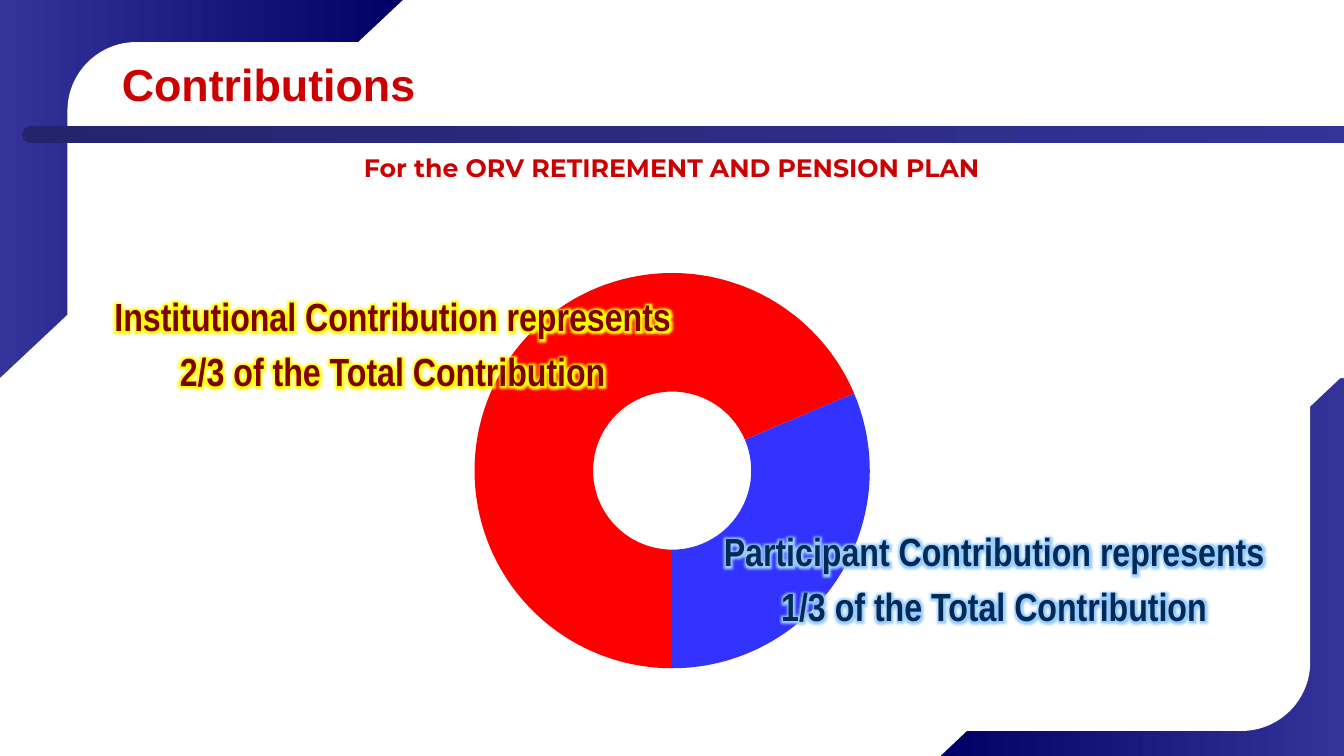
import pptx
import pptx.util
import pptx.dml.color
import pptx.enum.shapes
import pptx.enum.text
import pptx.oxml.ns
import lxml.etree

Cm = pptx.util.Cm
Pt = pptx.util.Pt
SHAPE = pptx.enum.shapes.MSO_SHAPE
ALIGN = pptx.enum.text.PP_ALIGN
ANCHOR = pptx.enum.text.MSO_ANCHOR
qn = pptx.oxml.ns.qn

COLORS = {
    "white": "FFFFFF", "navy": "000066", "indigo": "333399", "dusk": "24246D",
    "heading": "CC0000", "red": "FF0000", "blue": "3333FF",
    "maroon": "800000", "yellow": "FFFF00", "ink": "002A56", "sky": "99CCFF",
}

FRAME = [
    (SHAPE.RECTANGLE, (23.72, 9.53, 10.15, 9.52), ("navy", "indigo"), None, ()),
    (SHAPE.RIGHT_TRIANGLE, (23.7, 9.45, 10.16, 9.6), ("white",), "flipV", ()),
    (SHAPE.RECTANGLE, (0, 0, 10.16, 9.53), ("indigo", "navy"), None, ()),
    (SHAPE.RIGHT_TRIANGLE, (0, 0, 10.16, 9.53), ("white",), "flipH", ()),
    (SHAPE.RECTANGLE, (0, 9.53, 10.44, 9.52), ("white",), None, ()),
    (SHAPE.RECTANGLE, (23.42, 0, 10.45, 9.53), ("white",), None, ()),
    (SHAPE.ROUNDED_RECTANGLE, (1.7, 1.06, 31.32, 17.36), ("white",), None, (0.1,)),
    (SHAPE.ROUNDED_RECTANGLE, (0.56, 3.18, 34.44, 0.43), ("dusk", "indigo"), None, (0.5,)),
]

TITLE = "Contributions"
SUBTITLE = "For the ORV RETIREMENT AND PENSION PLAN"
RING_BOX = (11.96, 6.88, 9.96, 9.96)
RING_HOLE = 0.3
PARTS = [
    {"arc": (90, 337), "color": "red", "box": (1.6, 7.24, 16.59, 2.9),
     "text": "Institutional Contribution represents\n2/3 of the Total Contribution",
     "ink": "maroon", "glow": "yellow"},
    {"arc": (337, 90), "color": "blue", "box": (16.92, 13.16, 16.26, 2.9),
     "text": "Participant Contribution represents\n1/3 of the Total Contribution",
     "ink": "ink", "glow": "sky"},
]


def rgb(name):
    return pptx.dml.color.RGBColor.from_string(COLORS[name])


def add_shape(page, kind, box, colors, flip=None, adjustments=()):
    shape = page.shapes.add_shape(kind, *map(Cm, box))
    shape.shadow.inherit = False
    shape.line.fill.background()
    if len(colors) == 1:
        shape.fill.solid()
        shape.fill.fore_color.rgb = rgb(colors[0])
    else:
        shape.fill.gradient()
        shape.fill.gradient_angle = 0
        for stop, color, position in zip(shape.fill.gradient_stops, colors, (0, 1)):
            stop.color.rgb = rgb(color)
            stop.position = position
    if flip:
        shape._element.spPr.find(qn("a:xfrm")).set(flip, "1")
    for index, value in enumerate(adjustments):
        shape.adjustments[index] = value


def add_glow(span, color):
    effects = lxml.etree.Element(qn("a:effectLst"))
    glow = lxml.etree.SubElement(effects, qn("a:glow"), rad=str(Pt(10)))
    lxml.etree.SubElement(glow, qn("a:srgbClr"), val=COLORS[color])
    span._r.rPr.find(qn("a:solidFill")).addnext(effects)


def add_text(page, text, box, font, size, color, align=ALIGN.CENTER,
             anchor=ANCHOR.TOP, gap=0, glow=None):
    frame = page.shapes.add_textbox(*map(Cm, box)).text_frame
    frame.word_wrap = True
    frame.vertical_anchor = anchor
    for index, line in enumerate(text.split("\n")):
        para = frame.add_paragraph() if index else frame.paragraphs[0]
        para.alignment = align
        para.space_before = Pt(gap if index else 0)
        span = para.add_run()
        span.text = line
        span.font.name = font
        span.font.size = Pt(size)
        span.font.bold = True
        span.font.color.rgb = rgb(color)
        if glow:
            add_glow(span, glow)


def main():
    deck = pptx.Presentation()
    deck.slide_width, deck.slide_height = Cm(33.87), Cm(19.05)
    page = deck.slides.add_slide(deck.slide_layouts[6])

    for kind, box, colors, flip, adjustments in FRAME:
        add_shape(page, kind, box, colors, flip, adjustments)

    add_text(page, TITLE, (2.82, 1.25, 29.36, 1.7), "Arial", 32, "heading",
             align=ALIGN.LEFT, anchor=ANCHOR.MIDDLE)
    add_text(page, SUBTITLE, (4.23, 3.71, 25.4, 1.02), "Montserrat", 18, "heading")

    for part in PARTS:
        start, end = (degrees * 0.6 for degrees in part["arc"])
        add_shape(page, SHAPE.BLOCK_ARC, RING_BOX, (part["color"],),
                  adjustments=(start, end, RING_HOLE))
        add_text(page, part["text"], part["box"], "Arial Narrow", 28, part["ink"],
                 gap=5.6, glow=part["glow"])

    deck.save("out.pptx")


if __name__ == "__main__":
    main()
